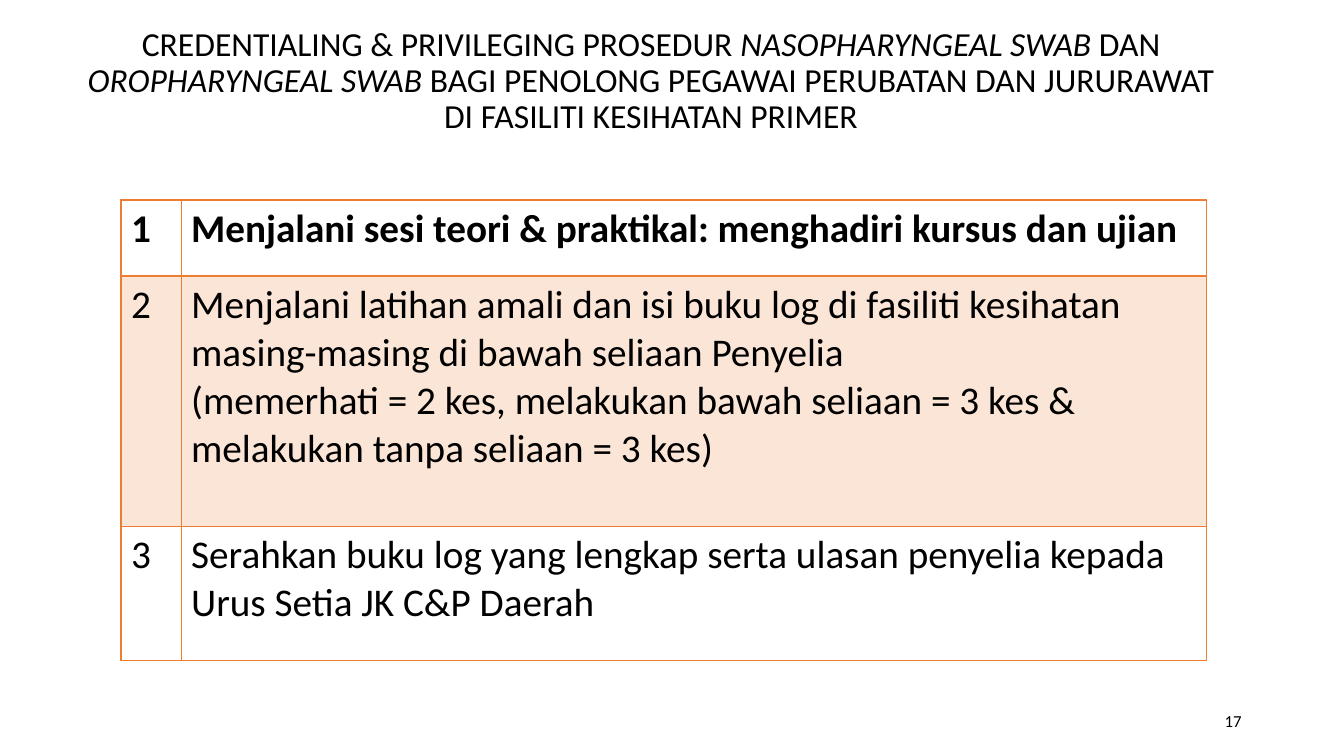
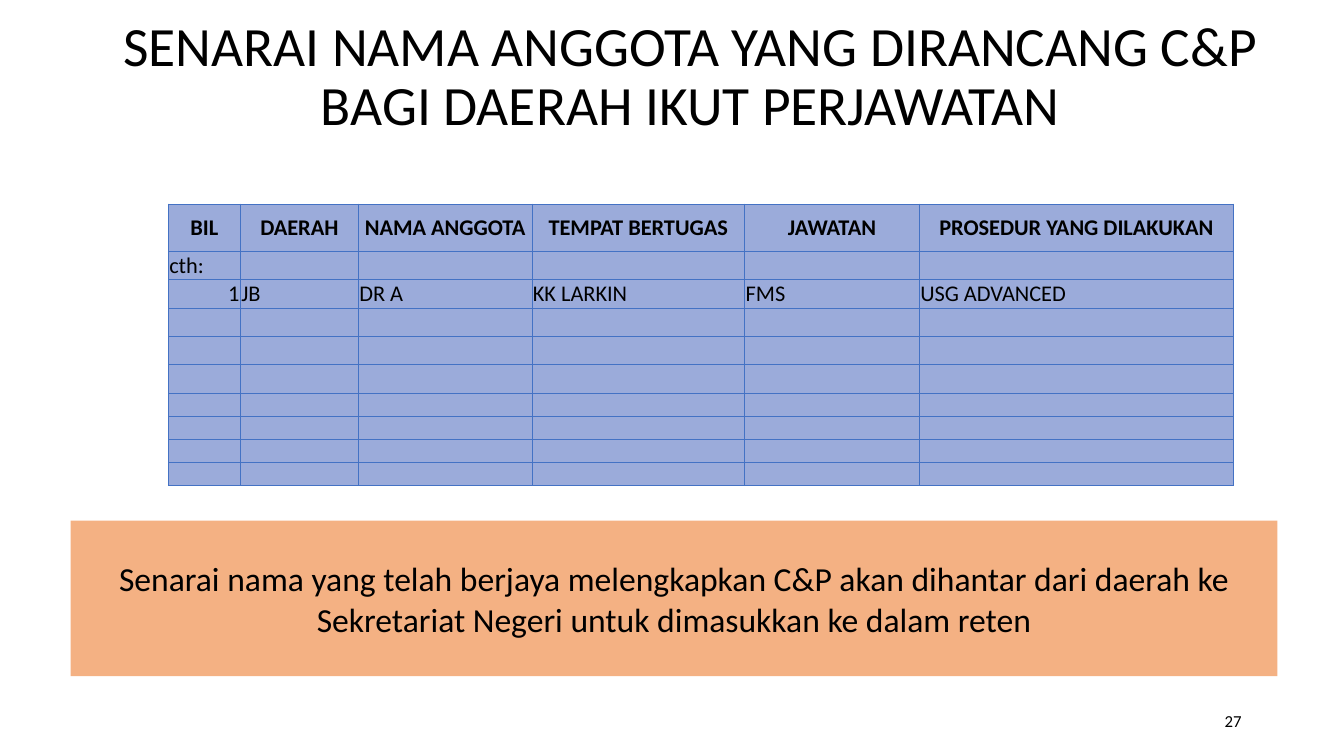
from lxml.etree import SubElement
from pptx import Presentation
from pptx.dml.color import RGBColor
from pptx.enum.shapes import MSO_SHAPE
from pptx.enum.text import MSO_ANCHOR, PP_ALIGN
from pptx.oxml.ns import qn
from pptx.util import Pt

COLORS = {
    "text": "000000",
    "orange": "ED7D31",
    "pale_orange": "FBE5D6",
    "notice": "F4B183",
    "blue": "4472C4",
    "pale_blue": "9BABDA",
}
FONT = "Calibri"

STEPS = [
    ("1", "Menjalani sesi teori & praktikal: menghadiri kursus dan ujian"),
    ("2", "Menjalani latihan amali dan isi buku log di fasiliti kesihatan "
          "masing-masing di bawah seliaan Penyelia\n"
          "(memerhati = 2 kes, melakukan bawah seliaan = 3 kes & "
          "melakukan tanpa seliaan = 3 kes)"),
    ("3", "Serahkan buku log yang lengkap serta ulasan penyelia kepada "
          "Urus Setia JK C&P Daerah"),
]
STAFF_HEADINGS = ["BIL", "DAERAH", "NAMA ANGGOTA", "TEMPAT BERTUGAS", "JAWATAN",
                  "PROSEDUR YANG DILAKUKAN"]
STAFF_EXAMPLES = [
    ["cth:", "", "", "", "", ""],
    ["1", "JB", "DR A", "KK LARKIN", "FMS", "USG ADVANCED"],
]
EMPTY_STAFF_ROWS = 7


def rgb(name):
    return RGBColor.from_string(COLORS[name])


def write(frame, text, size, bold=False, align=PP_ALIGN.LEFT, spacing=None):
    """Newline starts a paragraph, \\v breaks a line, asterisks enclose italics."""
    frame.word_wrap = True
    for index, line in enumerate(text.split("\n")):
        paragraph = frame.add_paragraph() if index else frame.paragraphs[0]
        paragraph.alignment = align
        if spacing:
            paragraph.line_spacing = spacing
        if not line:
            SubElement(paragraph._p, qn("a:endParaRPr"), sz=str(int(size * 100)))
            continue
        for part_index, part in enumerate(line.split("*")):
            for piece_index, piece in enumerate(part.split("\v")):
                if piece_index:
                    paragraph.add_line_break()
                run = paragraph.add_run()
                run.text = piece
                run.font.name = FONT
                run.font.size = Pt(size)
                run.font.bold = bold
                run.font.italic = part_index % 2 == 1
                run.font.color.rgb = rgb("text")


def add_text(slide, text, left, top, width, height, **style):
    box = slide.shapes.add_textbox(Pt(left), Pt(top), Pt(width), Pt(height))
    box.text_frame.vertical_anchor = MSO_ANCHOR.MIDDLE
    write(box.text_frame, text, **style)


def add_title(slide, text, left, top, width, height, size):
    add_text(slide, text, left, top, width, height, size=size,
             align=PP_ALIGN.CENTER, spacing=0.9)


def add_page_number(slide, number):
    add_text(slide, number, 678, 500.5, 216, 28.75, size=12, align=PP_ALIGN.RIGHT)


def add_notice(slide, text, left, top, width, height):
    notice = slide.shapes.add_shape(MSO_SHAPE.RECTANGLE, Pt(left), Pt(top),
                                    Pt(width), Pt(height))
    notice.shadow.inherit = False
    notice.fill.solid()
    notice.fill.fore_color.rgb = rgb("notice")
    notice.line.fill.background()
    notice.text_frame.vertical_anchor = MSO_ANCHOR.MIDDLE
    write(notice.text_frame, text, size=24, align=PP_ALIGN.CENTER)


def add_grid(slide, left, top, columns, rows):
    frame = slide.shapes.add_table(len(rows), len(columns), Pt(left), Pt(top),
                                   Pt(sum(columns)), Pt(sum(rows)))
    table = frame.table
    table.first_row = False
    table.horz_banding = False
    for column, width in zip(table.columns, columns):
        column.width = Pt(width)
    for row, height in zip(table.rows, rows):
        row.height = Pt(height)
    return table


def style_cell(cell, border, width, fill=None, top=None, bottom=None):
    properties = cell._tc.get_or_add_tcPr()
    edges = {"L": width, "R": width, "T": top or width, "B": bottom or width}
    for side, weight in edges.items():
        line = SubElement(properties, qn(f"a:ln{side}"), w=str(Pt(weight)))
        paint = SubElement(line, qn("a:solidFill"))
        SubElement(paint, qn("a:srgbClr"), val=COLORS[border])
    if fill:
        cell.fill.solid()
        cell.fill.fore_color.rgb = rgb(fill)
    else:
        cell.fill.background()


def add_steps_table(slide):
    table = add_grid(slide, 86.4, 142.8, [43, 732.5], [54.5, 178.8, 96])
    for row, step in enumerate(STEPS):
        for column, text in enumerate(step):
            cell = table.cell(row, column)
            style_cell(cell, "orange", 1,
                       fill="pale_orange" if row == 1 else None,
                       top=2 if row == 1 else None,
                       bottom=2 if row == 0 else None)
            write(cell.text_frame, text, size=28, bold=row == 0)


def add_staff_table(slide):
    columns = [51.5, 84.25, 124, 152, 124.75, 224.5]
    table = add_grid(slide, 120.25, 145.75, columns,
                     [33.6] + [20.3] * 5 + [16.4] * 4)
    blank = [""] * len(columns)
    content = [STAFF_HEADINGS] + STAFF_EXAMPLES + [blank] * EMPTY_STAFF_ROWS
    for row, values in enumerate(content):
        heading = row == 0
        for column, text in enumerate(values):
            cell = table.cell(row, column)
            style_cell(cell, "blue", 0.5, fill="pale_blue")
            cell.margin_left = cell.margin_right = cell.margin_top = Pt(0.7)
            cell.margin_bottom = Pt(0)
            cell.vertical_anchor = MSO_ANCHOR.MIDDLE if heading else MSO_ANCHOR.BOTTOM
            if heading:
                align = PP_ALIGN.CENTER
            else:
                align = PP_ALIGN.RIGHT if text.isdigit() else PP_ALIGN.LEFT
            write(cell.text_frame, text, size=16 if text else 12, bold=heading,
                  align=align)


def build_procedure_slide(slide):
    add_title(slide,
              "CREDENTIALING & PRIVILEGING PROSEDUR *NASOPHARYNGEAL SWAB *DAN "
              "*OROPHARYNGEAL SWAB *BAGI PENOLONG PEGAWAI PERUBATAN DAN JURURAWAT\v"
              "DI FASILITI KESIHATAN PRIMER",
              34, 18, 862, 80.5, size=24)
    add_steps_table(slide)
    add_page_number(slide, "17")


def build_staff_slide(slide):
    add_title(slide,
              "SENARAI NAMA ANGGOTA YANG DIRANCANG C&P BAGI DAERAH IKUT PERJAWATAN",
              50.5, 24.5, 885.5, 62.5, size=39.6)
    add_staff_table(slide)
    add_notice(slide,
               "Senarai nama yang telah berjaya melengkapkan C&P akan dihantar dari "
               "daerah ke Sekretariat Negeri untuk dimasukkan ke dalam reten",
               50.5, 372, 862, 111)
    add_page_number(slide, "27")


def main():
    deck = Presentation()
    deck.slide_width, deck.slide_height = Pt(960), Pt(540)
    for build in (build_procedure_slide, build_staff_slide):
        build(deck.slides.add_slide(deck.slide_layouts[6]))
    deck.save("out.pptx")


if __name__ == "__main__":
    main()
